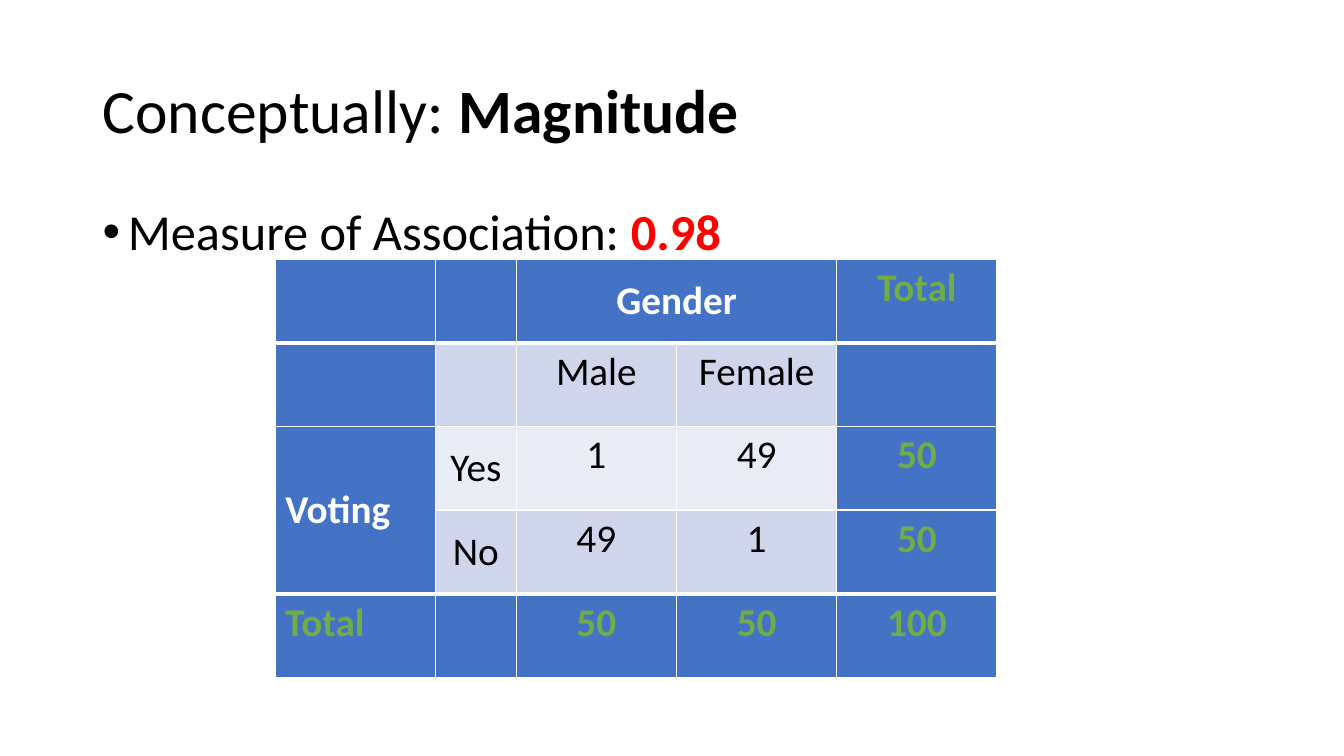
from lxml import etree
from pptx import Presentation
from pptx.dml.color import RGBColor
from pptx.enum.text import MSO_ANCHOR, PP_ALIGN
from pptx.oxml.ns import qn
from pptx.util import Inches, Pt

MIDDLE, TOP = MSO_ANCHOR.MIDDLE, MSO_ANCHOR.TOP
LEFT, CENTER = PP_ALIGN.LEFT, PP_ALIGN.CENTER

FONT = "Calibri"
BLACK, WHITE, RED, GREEN = "000000", "FFFFFF", "FF0000", "70AD47"
BLUE, DARK, LIGHT = "4472C4", "CFD5EA", "E9EBF5"

# Runs: text, colour, bold
TITLE = [("Conceptually: ", BLACK, False), ("Magnitude", BLACK, True)]
BODY = [("Measure of Association: ", BLACK, False), ("0.98", RED, True)]

ROWS = [
    ["", "", "Gender", "", "Total"],
    ["", "", "Male", "Female", ""],
    ["Voting", "Yes", "1", "49", "50"],
    ["", "No", "49", "1", "50"],
    ["Total", "", "50", "50", "100"],
]
MERGES = [((0, 2), (0, 3)), ((2, 0), (3, 0))]
WIDTHS = [1.59, 0.8, 1.59, 1.59, 1.59]
HEIGHT = 0.83
HEADS = ("Gender", "Voting")
MIDS = HEADS + ("Yes", "No")
LAST = len(ROWS) - 1


def color(code):
    return RGBColor.from_string(code)


def style(run, size, code, bold):
    run.font.name = FONT
    run.font.size = Pt(size)
    run.font.bold = bold
    run.font.color.rgb = color(code)


def add_line(slide, box, runs, size, anchor):
    """Add a text box holding one paragraph of styled runs."""
    shape = slide.shapes.add_textbox(*[Inches(n) for n in box])
    frame = shape.text_frame
    frame.word_wrap = True
    frame.vertical_anchor = anchor
    para = frame.paragraphs[0]
    para.line_spacing = 0.9
    for text, code, bold in runs:
        run = para.add_run()
        run.text = text
        style(run, size, code, bold)
    return para


def add_bullet(para):
    props = para._p.get_or_add_pPr()
    props.set("marL", str(Inches(0.25)))
    props.set("indent", str(Inches(-0.25)))
    etree.SubElement(props, qn("a:buFont")).set("typeface", "Arial")
    etree.SubElement(props, qn("a:buChar")).set("char", "•")


def add_edges(cell, row):
    """Draw white cell borders, thick below the head and above the total."""
    top = 3 if row in (1, LAST) else 1
    base = 3 if row in (0, LAST - 1) else 1
    props = cell._tc.get_or_add_tcPr()
    for side, width in (("L", 1), ("R", 1), ("T", top), ("B", base)):
        line = etree.SubElement(props, qn("a:ln" + side))
        line.set("w", str(Pt(width)))
        fill = etree.SubElement(line, qn("a:solidFill"))
        etree.SubElement(fill, qn("a:srgbClr")).set("val", WHITE)


def fill_cell(cell, row, col):
    text = ROWS[row][col]
    outer = row in (0, LAST) or col in (0, len(WIDTHS) - 1)
    add_edges(cell, row)
    cell.fill.solid()
    band = DARK if row % 2 else LIGHT
    cell.fill.fore_color.rgb = color(BLUE if outer else band)
    cell.vertical_anchor = MIDDLE if text in MIDS else TOP
    if not text:
        return
    cell.text_frame.text = text
    para = cell.text_frame.paragraphs[0]
    para.alignment = CENTER if col else LEFT
    code = WHITE if text in HEADS else GREEN if outer else BLACK
    style(para.runs[0], 28, code, outer)


def add_grid(slide):
    frame = slide.shapes.add_table(
        len(ROWS), len(WIDTHS), Inches(2.73), Inches(2.57),
        Inches(sum(WIDTHS)), Inches(HEIGHT * len(ROWS)))
    table = frame.table
    for col, width in zip(table.columns, WIDTHS):
        col.width = Inches(width)
    for row in table.rows:
        row.height = Inches(HEIGHT)
    for first, last in MERGES:
        table.cell(*first).merge(table.cell(*last))
    for row in range(len(ROWS)):
        for col in range(len(WIDTHS)):
            fill_cell(table.cell(row, col), row, col)


def main():
    deck = Presentation()
    deck.slide_width, deck.slide_height = Inches(13.33), Inches(7.5)
    slide = deck.slides.add_slide(deck.slide_layouts[6])
    body = add_line(slide, (0.92, 2, 11.5, 4.76), BODY, 36, TOP)
    body.space_before = Pt(10)
    add_bullet(body)
    add_line(slide, (0.92, 0.4, 11.5, 1.45), TITLE, 44, MIDDLE)
    add_grid(slide)
    deck.save("out.pptx")


if __name__ == "__main__":
    main()
